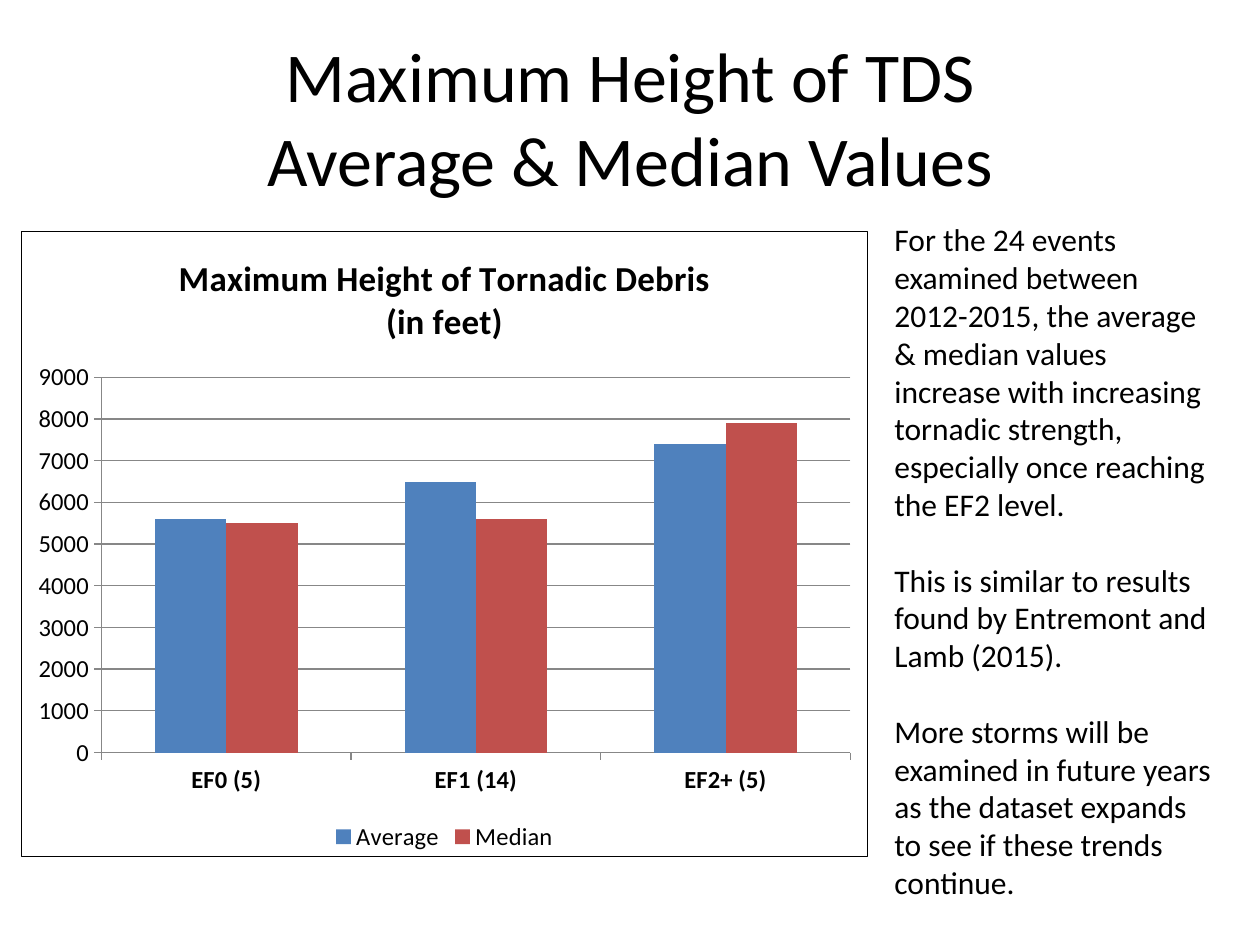
from dataclasses import dataclass

from lxml.etree import fromstring
from pptx import Presentation
from pptx.chart.data import CategoryChartData
from pptx.dml.color import RGBColor
from pptx.enum.chart import XL_CHART_TYPE, XL_LEGEND_POSITION, XL_TICK_MARK
from pptx.enum.text import MSO_ANCHOR, PP_ALIGN
from pptx.util import Pt


@dataclass(frozen=True)
class Theme:
    """Colours, font and type sizes of the slide."""
    font: str = "Calibri"
    ink: str = "000000"
    grid: str = "878787"
    average: str = "4F81BD"
    median: str = "C0504D"
    title: int = 40
    body: int = 18
    chart_title: int = 20
    label: int = 14


THEME = Theme()
BORDER = (
    '<c:spPr xmlns:c="http://schemas.openxmlformats.org/drawingml/2006/chart" '
    'xmlns:a="http://schemas.openxmlformats.org/drawingml/2006/main">'
    '<a:noFill/><a:ln w="9525"><a:solidFill><a:srgbClr val="{}"/></a:solidFill>'
    '</a:ln></c:spPr>'
)


def style_font(font, size, bold=False):
    """Apply the theme's face and ink to a font."""
    font.name, font.size, font.bold = THEME.font, Pt(size), bold
    font.color.rgb = RGBColor.from_string(THEME.ink)


def write_text(tf, paragraphs, size, bold=False, align=PP_ALIGN.LEFT, gap=0):
    """Fill a text frame with formatted paragraphs."""
    for i, text in enumerate(paragraphs):
        p = tf.add_paragraph() if i else tf.paragraphs[0]
        p.text, p.alignment = text, align
        p.space_before = Pt(gap if i else 0)
        for r in p.runs:
            style_font(r.font, size, bold)


def add_text(s, box, paragraphs, anchor=MSO_ANCHOR.TOP, **fmt):
    """Place a wrapped text box."""
    tf = s.shapes.add_textbox(*map(Pt, box)).text_frame
    tf.word_wrap, tf.vertical_anchor = True, anchor
    write_text(tf, paragraphs, **fmt)


def add_title(s, box):
    """Place the centred slide title."""
    add_text(s, box, ["Maximum Height of TDS\vAverage & Median Values"],
             anchor=MSO_ANCHOR.MIDDLE, size=THEME.title, align=PP_ALIGN.CENTER)


def style_axis(axis, bold=False):
    """Give an axis its line, ticks and labels."""
    axis.major_tick_mark = XL_TICK_MARK.OUTSIDE
    axis.minor_tick_mark = XL_TICK_MARK.NONE
    axis.format.line.color.rgb = RGBColor.from_string(THEME.grid)
    style_font(axis.tick_labels.font, THEME.label, bold)


def add_height_chart(s, box):
    """Place the bordered column chart of debris heights."""
    data = CategoryChartData()
    data.categories = ["EF0 (5)", "EF1 (14)", "EF2+ (5)"]
    data.add_series("Average", (5600, 6500, 7400))
    data.add_series("Median", (5500, 5600, 7900))
    chart = s.shapes.add_chart(XL_CHART_TYPE.COLUMN_CLUSTERED,
                               *map(Pt, box), data).chart
    style_font(chart.font, THEME.label)
    write_text(chart.chart_title.text_frame,
               ["Maximum Height of Tornadic Debris", "(in feet)"],
               size=THEME.chart_title, bold=True, align=PP_ALIGN.CENTER)
    chart.chart_title.include_in_layout = False

    style_axis(chart.category_axis, bold=True)
    axis = chart.value_axis
    style_axis(axis)
    axis.minimum_scale, axis.maximum_scale, axis.major_unit = 0, 9000, 1000
    axis.has_major_gridlines = True
    axis.major_gridlines.format.line.color.rgb = RGBColor.from_string(THEME.grid)

    chart.has_legend = True
    chart.legend.position = XL_LEGEND_POSITION.BOTTOM
    chart.legend.include_in_layout = False
    style_font(chart.legend.font, THEME.label)

    plot = chart.plots[0]
    plot.gap_width, plot.overlap, plot.vary_by_categories = 150, 0, False
    for series, color in zip(plot.series, (THEME.average, THEME.median)):
        series.format.fill.solid()
        series.format.fill.fore_color.rgb = RGBColor.from_string(color)
    chart.element.chart.addnext(fromstring(BORDER.format(THEME.ink)))


def add_findings(s, box):
    """Place the commentary, one blank line's height between paragraphs."""
    add_text(s, box, [
        "For the 24 events examined between 2012-2015, the average & median "
        "values increase with increasing tornadic strength, especially once "
        "reaching the EF2 level.",
        "This is similar to results found by Entremont and Lamb (2015).",
        "More storms will be examined in future years as the dataset expands "
        "to see if these trends continue.",
    ], size=THEME.body, gap=21.6)


def main():
    """Build and save the slide."""
    prs = Presentation()
    prs.slide_width, prs.slide_height = Pt(720), Pt(540)
    s = prs.slides.add_slide(prs.slide_layouts[6])
    add_title(s, (36, 21.6, 648, 90))
    add_height_chart(s, (12, 132, 484, 358))
    add_findings(s, (504, 122.4, 198, 399.6))
    prs.save("out.pptx")


if __name__ == "__main__":
    main()
